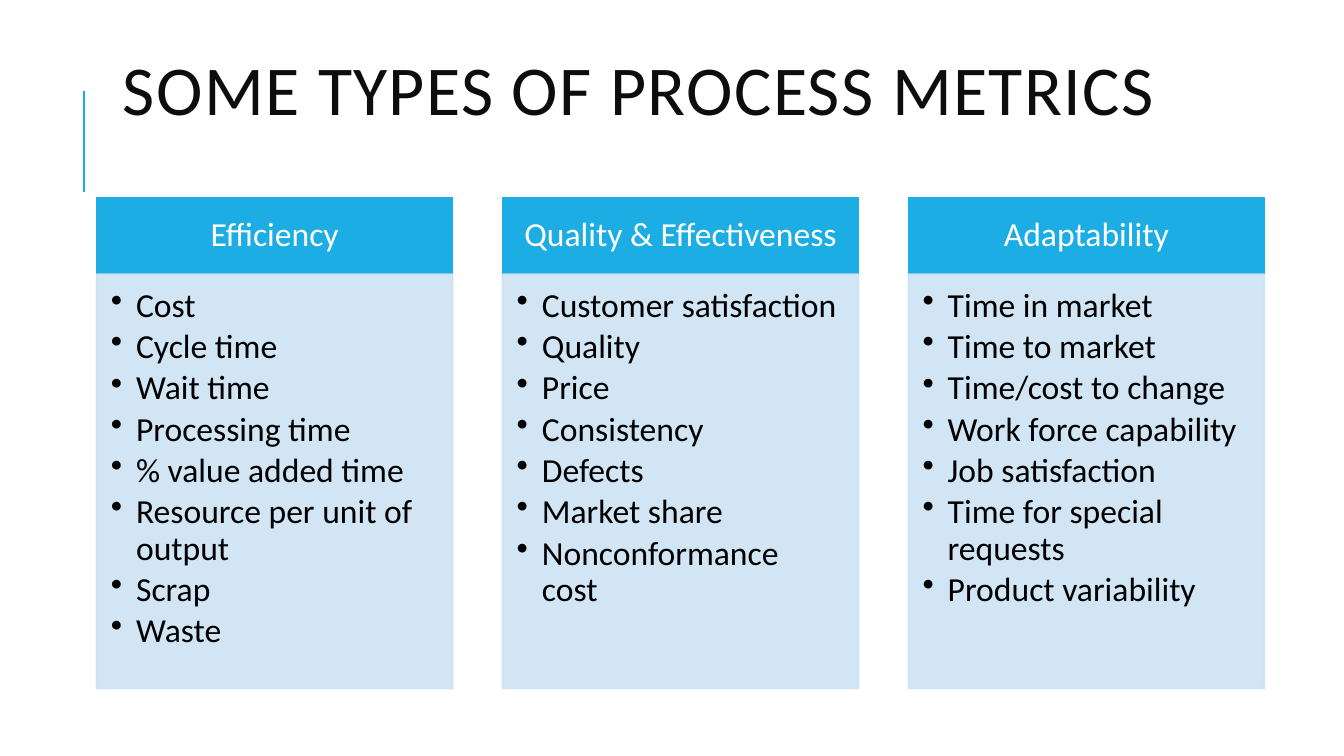
from lxml import etree
from pptx import Presentation, util as u
from pptx.dml import color
from pptx.enum import shapes, text
from pptx.oxml import ns

ACCENT, PALE = "1CADE4", "CDE3F5"
METRICS = {
    "Efficiency": [
        "Cost", "Cycle time", "Wait time", "Processing time",
        "% value added time", "Resource per unit of output", "Scrap", "Waste",
    ],
    "Quality & Effectiveness": [
        "Customer satisfaction", "Quality", "Price", "Consistency",
        "Defects", "Market share", "Nonconformance cost",
    ],
    "Adaptability": [
        "Time in market", "Time to market", "Time/cost to change",
        "Work force capability", "Job satisfaction",
        "Time for special requests", "Product variability",
    ],
}


def rgb(value):
    return color.RGBColor.from_string(value)


def set_font(paragraph, size, shade):
    paragraph.font.name = "Calibri"
    paragraph.font.size = u.Pt(size)
    paragraph.font.color.rgb = rgb(shade)


def set_frame(frame, anchor, insets):
    frame.word_wrap = True
    frame.vertical_anchor = anchor
    (frame.margin_left, frame.margin_top,
     frame.margin_right, frame.margin_bottom) = map(u.Inches, insets)


def add_panel(slide, box, shade):
    panel = slide.shapes.add_shape(shapes.MSO_SHAPE.RECTANGLE, *map(u.Inches, box))
    panel.shadow.inherit = False
    panel.fill.solid()
    panel.fill.fore_color.rgb = rgb(shade)
    panel.line.color.rgb = rgb(shade)
    panel.line.width = u.Pt(1.25)
    return panel


def make_translucent(panel, percent):
    for tint in panel._element.spPr.iter(ns.qn("a:srgbClr")):
        etree.SubElement(tint, ns.qn("a:alpha"), val=str(percent * 1000))


def add_bullet(paragraph, indent):
    properties = paragraph._p.get_or_add_pPr()
    properties.set("marL", str(u.Inches(indent)))
    properties.set("indent", str(-u.Inches(indent)))
    etree.SubElement(properties, ns.qn("a:buChar"), char="•")


def add_title(slide, left, top, width, height, wording):
    rule_x = u.Inches(left - 0.29)
    rule = slide.shapes.add_connector(
        shapes.MSO_CONNECTOR.STRAIGHT,
        rule_x, u.Inches(top + 1.77), rule_x, u.Inches(top + 0.77))
    rule.line.color.rgb = rgb(ACCENT)
    rule.line.width = u.Pt(1.5)
    etree.SubElement(rule._element.spPr, ns.qn("a:effectLst"))

    title = slide.shapes.add_textbox(*map(u.Inches, (left, top, width, height)))
    set_frame(title.text_frame, text.MSO_ANCHOR.MIDDLE, (0.1, 0.05, 0.1, 0.05))
    heading = title.text_frame.paragraphs[0]
    heading.text = wording
    heading.line_spacing = 0.8
    set_font(heading, 50, "0D0D0D")
    heading.runs[0]._r.get_or_add_rPr().set("spc", "100")


def add_metric_column(slide, left, top, width, height, category, metrics):
    header_height = 0.76
    header = add_panel(slide, (left, top, width, header_height), ACCENT)
    set_frame(header.text_frame, text.MSO_ANCHOR.MIDDLE, (0.19, 0.11, 0.19, 0.11))
    label = header.text_frame.paragraphs[0]
    label.text = category
    label.alignment = text.PP_ALIGN.CENTER
    label.line_spacing = 0.9
    set_font(label, 24, "FFFFFF")

    body = add_panel(
        slide, (left, top + header_height, width, height - header_height), PALE)
    make_translucent(body, 90)
    set_frame(body.text_frame, text.MSO_ANCHOR.TOP, (0.14, 0.14, 0.19, 0.21))
    body.text_frame.text = "\n".join(metrics)
    for metric in body.text_frame.paragraphs:
        add_bullet(metric, 0.25)
        metric.alignment = text.PP_ALIGN.LEFT
        metric.line_spacing = 0.9
        metric.space_after = u.Pt(3.6)
        set_font(metric, 24, "000000")


def add_metric_columns(slide, left, top, width, height):
    column_width = 3.53
    step = (width - column_width) / (len(METRICS) - 1)
    for index, (category, metrics) in enumerate(METRICS.items()):
        add_metric_column(slide, left + index * step, top, column_width, height,
                          category, metrics)


def main():
    deck = Presentation()
    deck.slide_width, deck.slide_height = u.Inches(13.33), u.Inches(7.5)
    slide = deck.slides.add_slide(deck.slide_layouts[6])
    add_title(slide, 1.12, 0.13, 10.63, 1.64, "SOME TYPES OF PROCESS METRICS")
    add_metric_columns(slide, 0.96, 1.96, 11.58, 4.87)
    deck.save("out.pptx")


if __name__ == "__main__":
    main()
